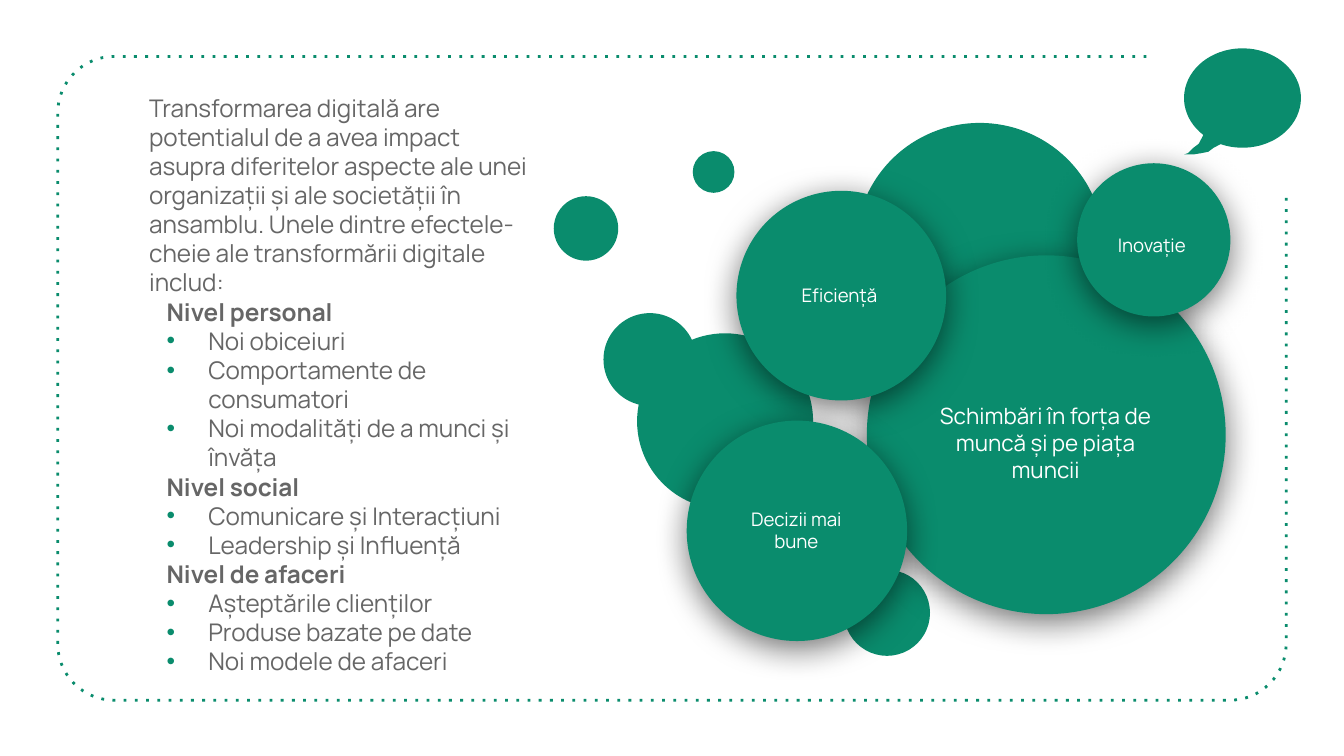
from math import cos, radians, sin
from lxml.etree import SubElement
from pptx import Presentation
from pptx.dml.color import RGBColor as RGB
from pptx.enum.shapes import MSO_SHAPE as SHAPE
from pptx.enum.text import MSO_ANCHOR as ANCHOR, MSO_AUTO_SIZE as FIT, PP_ALIGN as ALIGN
from pptx.oxml import parse_xml
from pptx.oxml.ns import nsdecls, qn
from pptx.util import Inches, Pt

W = 10
H = W * 9 / 16
FONT = "Manrope"
COLORS = {"green": "0A8C6D", "grey": "666666", "white": "FFFFFF", "shadow": "000000"}

INTRO = ("Transformarea digitală are potentialul de a avea impact asupra diferitelor "
         "aspecte ale unei organizații și ale societății în ansamblu. Unele dintre "
         "efectele-cheie ale transformării digitale includ:")
LEVELS = {
    "Nivel personal": ["Noi obiceiuri", "Comportamente de consumatori",
                       "Noi modalități de a munci și învăța"],
    "Nivel social": ["Comunicare și Interacțiuni", "Leadership și Influență"],
    "Nivel de afaceri": ["Așteptările clienților", "Produse bazate pe date",
                         "Noi modele de afaceri"],
}
PLAIN_BUBBLES = [
    (6.28, 4.24, 0.64, 0), (4.12, 1.46, 0.48, 0), (4.74, 2.48, 1.31, 0),
    (6.37, 0.92, 1.84, 0.75), (4.49, 2.33, 0.69, 0), (5.16, 1.13, 0.3, 0.75),
]
LABELLED_BUBBLES = [
    ("Schimbări în forța de muncă și pe piața muncii", 12, 0,
     (6.45, 1.9, 2.67), (6.76, 2.66, 2.04, 1.27)),
    ("Eficiență ", 10, 0, (5.48, 1.42, 1.56), (5.73, 1.68, 1.06, 1.03)),
    ("Decizii mai bune", 10, 0, (5.11, 3.13, 1.64), (5.34, 3.43, 1.17, 1.03)),
    ("Inovație", 10, 0.75, (8.02, 1.22, 1.13), (8.14, 1.52, 0.86, 0.6)),
]
SPEECH_TAIL = [(9.03, 1.1), (8.99, 1.13), (8.94, 1.14), (8.88, 1.15), (8.81, 1.15),
               (8.84, 1.14), (8.88, 1.1), (8.92, 1.07)]


def color(name):
    return RGB.from_string(COLORS[name])


def arc(cx, cy, rx, ry, start, end, steps):
    angles = [radians(start + (end - start) * i / steps) for i in range(steps + 1)]
    return [(cx + rx * cos(a), cy + ry * sin(a)) for a in angles]


def outline(shapes, points, close):
    start, *rest = [(Inches(x), Inches(y)) for x, y in points]
    builder = shapes.build_freeform(*start)
    builder.add_line_segments(rest, close=close)
    sp = builder.convert_to_shape()
    sp.shadow.inherit = False
    return sp


def paint(sp, border=0):
    sp.fill.solid()
    sp.fill.fore_color.rgb = color("green")
    if border:
        sp.line.color.rgb = color("green")
        sp.line.width = Pt(border)
    else:
        sp.line.fill.background()
    sp.shadow.inherit = False


def add_shape(shapes, kind, box, border):
    sp = shapes.add_shape(kind, *map(Inches, box))
    paint(sp, border)
    return sp


def add_shadow(sp):
    effects = sp._element.spPr.find(qn("a:effectLst"))
    effects.append(parse_xml(
        f'<a:outerShdw {nsdecls("a")} blurRad="{Pt(18)}" dist="{Pt(4)}" dir="5400000" '
        f'algn="bl" rotWithShape="0"><a:srgbClr val="{COLORS["shadow"]}">'
        '<a:alpha val="55000"/></a:srgbClr></a:outerShdw>'))


def set_margins(tf):
    tf.margin_left = tf.margin_right = tf.margin_top = tf.margin_bottom = Inches(0.1)
    tf.word_wrap = True


def style(p, size, tone, bold=False):
    for r in p.runs:
        r.font.name, r.font.size, r.font.bold = FONT, Pt(size), bold
        r.font.color.rgb = color(tone)


def set_indent(p, left, first, bullet=False):
    pPr = p._p.get_or_add_pPr()
    pPr.set("marL", str(Inches(left)))
    pPr.set("indent", str(Inches(first)))
    if bullet:
        tint = SubElement(pPr, qn("a:buClr"))
        SubElement(tint, qn("a:srgbClr"), val=COLORS["green"])
        SubElement(pPr, qn("a:buChar"), char="•")
    else:
        SubElement(pPr, qn("a:buNone"))


def add_frame(shapes):
    left, right, top, bottom, radius = 0.43, 9.57, 0.42, 5.21, 0.42
    corners = [(left + radius, top + radius, 270), (left + radius, bottom - radius, 180),
               (right - radius, bottom - radius, 90)]
    points = [(8.53, top)]
    for cx, cy, start in corners:
        points += arc(cx, cy, radius, radius, start, start - 90, 16)
    frame = outline(shapes, points + [(right, 1.46)], close=False)
    frame.fill.background()
    frame.line.color.rgb = color("green")
    frame.line.width = Pt(1.5)
    SubElement(frame._element.spPr.find(qn("a:ln")), qn("a:prstDash"), val="dot")


def add_labelled_bubble(shapes, text, size, border, circle, label):
    group = shapes.add_group_shape()
    x, y, d = circle
    add_shadow(add_shape(group.shapes, SHAPE.OVAL, (x, y, d, d), border))
    tf = add_shape(group.shapes, SHAPE.RECTANGLE, label, border).text_frame
    set_margins(tf)
    tf.vertical_anchor = ANCHOR.MIDDLE
    tf.text = text
    tf.paragraphs[0].alignment = ALIGN.CENTER
    style(tf.paragraphs[0], size, "white")


def fill_body(body):
    body.left, body.top, body.width, body.height = map(Inches, (1.01, 0.59, 3.1, 4.53))
    rows = [(INTRO, "intro")]
    for level, effects in LEVELS.items():
        rows += [(level, "level")] + [(effect, "effect") for effect in effects]
    indents = {"intro": (0, 0), "level": (0.13, 0), "effect": (0.44, -0.31)}
    tf = body.text_frame
    set_margins(tf)
    tf.auto_size = FIT.NONE
    tf.vertical_anchor = ANCHOR.TOP
    tf.text = "\n".join(text for text, _ in rows)
    for p, (_, role) in zip(tf.paragraphs, rows):
        p.alignment = ALIGN.LEFT
        p.line_spacing = 1.0
        p.space_before = Pt(6 if role == "intro" else 0)
        p.space_after = Pt(0)
        set_indent(p, *indents[role], bullet=role == "effect")
        style(p, 13, "grey", bold=role == "level")


def main():
    prs = Presentation()
    prs.slide_width, prs.slide_height = Inches(W), Inches(H)
    s = prs.slides.add_slide(prs.slide_layouts[1])
    title = s.shapes.title._element
    title.getparent().remove(title)
    fill_body(s.placeholders[1])
    add_frame(s.shapes)
    for x, y, d, border in PLAIN_BUBBLES:
        add_shape(s.shapes, SHAPE.OVAL, (x, y, d, d), border)
    for bubble in LABELLED_BUBBLES:
        add_labelled_bubble(s.shapes, *bubble)
    speech = arc(9.245, 0.73, 0.435, 0.37, 132, 472, 68) + SPEECH_TAIL
    paint(outline(s.shapes, speech, close=True))
    prs.save("out.pptx")


if __name__ == "__main__":
    main()
